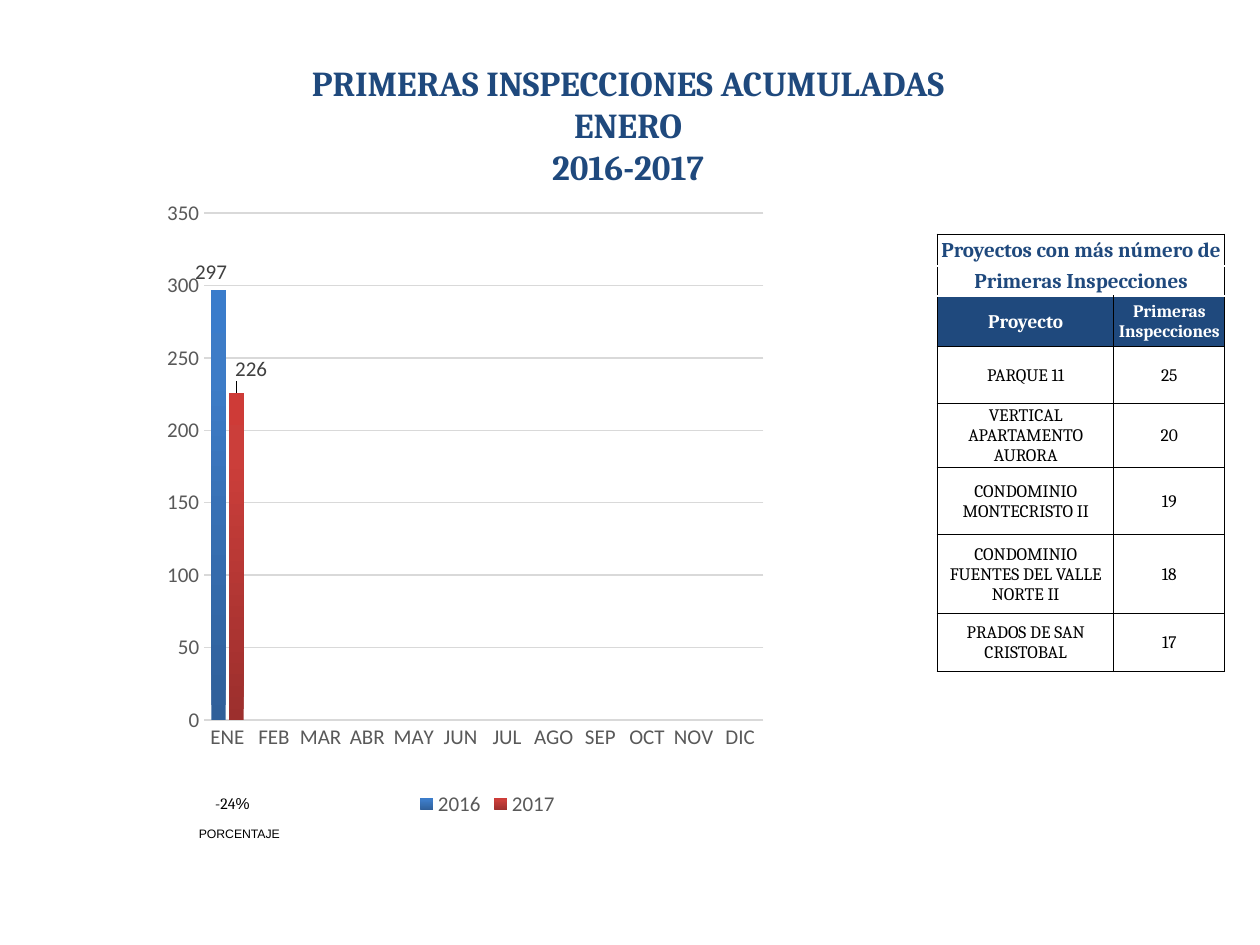
from lxml import etree
from pptx import Presentation
from pptx.chart.data import CategoryChartData
from pptx.dml.color import RGBColor
from pptx.enum.chart import XL_CHART_TYPE, XL_LABEL_POSITION, XL_LEGEND_POSITION, XL_TICK_MARK
from pptx.enum.text import MSO_ANCHOR, MSO_AUTO_SIZE, PP_ALIGN
from pptx.oxml import parse_xml
from pptx.oxml.ns import nsdecls, qn
from pptx.util import Inches, Pt

CENTER, LEFT = PP_ALIGN.CENTER, PP_ALIGN.LEFT
MIDDLE = MSO_ANCHOR.MIDDLE
FIT_SHAPE = MSO_AUTO_SIZE.SHAPE_TO_FIT_TEXT
COLUMNS = XL_CHART_TYPE.COLUMN_CLUSTERED
OUTSIDE_END = XL_LABEL_POSITION.OUTSIDE_END
BOTTOM = XL_LEGEND_POSITION.BOTTOM
NO_TICK = XL_TICK_MARK.NONE

WIDTH, HEIGHT = Inches(10), Inches(7.5)
NAVY, BLACK, WHITE = "1F497D", "000000", "FFFFFF"
AXIS_GRAY, GRID_GRAY, LABEL_GRAY = "595959", "D9D9D9", "404040"

MONTHS = ["ENE", "FEB", "MAR", "ABR", "MAY", "JUN", "JUL", "AGO", "SEP", "OCT", "NOV", "DIC"]
YEARS = [
    ("2016", 297, ("2F5F99", "3D7CC7", "3A7CCB"), (-0.01, 0)),
    ("2017", 226, ("9C2F2D", "CB3E3A", "CE3B37"), (0.02, -0.01)),
]
GRADIENT_STOPS = (0, 80, 100)
PLOT_AREA = {"x": 0.12, "y": 0.04, "w": 0.75, "h": 0.8}

HEADINGS = ["Proyectos con más número de", "Primeras Inspecciones"]
PROJECTS = [
    ("PARQUE 11", "25"),
    ("VERTICAL APARTAMENTO AURORA", "20"),
    ("CONDOMINIO MONTECRISTO II", "19"),
    ("CONDOMINIO FUENTES DEL VALLE NORTE II", "18"),
    ("PRADOS DE SAN CRISTOBAL", "17"),
]
COLUMN_SHARES = [14, 8.8]
ROW_SHARES = [3.33, 3.2, 5.33, 6, 6.53, 7.07, 8.4, 6.13]


def color(value):
    return RGBColor.from_string(value)


def across(share):
    return int(WIDTH * share / 100)


def down(share):
    return int(HEIGHT * share / 100)


def place(left, top, width, height):
    return across(left), down(top), across(width), down(height)


def style_font(font, size, shade, name="Calibri", bold=False):
    font.size = Pt(size)
    font.name = name
    font.bold = bold
    font.color.rgb = color(shade)


def add_span(para, text, size, shade, name="Cambria", bold=False):
    span = para.add_run()
    span.text = text
    style_font(span.font, size, shade, name, bold)


def add_text(slide, area, lines, align=LEFT):
    box = slide.shapes.add_textbox(*place(*area))
    frame = box.text_frame
    frame.word_wrap = True
    frame.auto_size = FIT_SHAPE
    for index, spans in enumerate(lines):
        para = frame.paragraphs[0] if index == 0 else frame.add_paragraph()
        para.alignment = align
        for span in spans:
            add_span(para, *span)


def set_borders(cell, widths):
    properties = cell._tc.get_or_add_tcPr()
    for side in "LRTB":
        if side in widths:
            line = etree.SubElement(properties, qn(f"a:ln{side}"), w=str(Pt(widths[side])))
            fill = etree.SubElement(line, qn("a:solidFill"))
            etree.SubElement(fill, qn("a:srgbClr"), val=BLACK)


def fill_cell(cell, text, size, shade, bold, widths, background=None):
    set_borders(cell, widths)
    cell.margin_left = cell.margin_right = cell.margin_top = Inches(0.01)
    cell.margin_bottom = 0
    cell.vertical_anchor = MIDDLE
    if background:
        cell.fill.solid()
        cell.fill.fore_color.rgb = color(background)
    else:
        cell.fill.background()
    para = cell.text_frame.paragraphs[0]
    para.alignment = CENTER
    if text:
        add_span(para, text, size, shade, bold=bold)


def add_project_table(slide, area):
    frame = slide.shapes.add_table(len(ROW_SHARES), len(COLUMN_SHARES), *place(*area))
    table = frame.table
    table.first_row = table.horz_banding = False
    for column, share in zip(table.columns, COLUMN_SHARES):
        column.width = across(share)
    for row, share in zip(table.rows, ROW_SHARES):
        row.height = down(share)
    for row, heading in enumerate(HEADINGS):
        widths = {"L": 1, "R": 1, "T": 1} if row == 0 else {"L": 1, "R": 1}
        table.cell(row, 0).merge(table.cell(row, 1))
        for column, text in enumerate((heading, "")):
            fill_cell(table.cell(row, column), text, 12, NAVY, True, widths)
    sides = [{"L": 1, "R": 0.5}, {"L": 0.5, "R": 1}]
    header_row = len(HEADINGS)
    for column, (text, size) in enumerate([("Proyecto", 11), ("Primeras Inspecciones", 10)]):
        widths = {**sides[column], "B": 0.5}
        fill_cell(table.cell(header_row, column), text, size, WHITE, True, widths, NAVY)
    for row, project in enumerate(PROJECTS, header_row + 1):
        for column, text in enumerate(project):
            widths = {**sides[column], "T": 0.5, "B": 0.5}
            fill_cell(table.cell(row, column), text, 10, BLACK, False, widths)


def manual_layout(values, inner=False):
    target = '<c:layoutTarget val="inner"/>' if inner else ""
    modes = '<c:xMode val="edge"/><c:yMode val="edge"/>' if inner else ""
    numbers = "".join(f'<c:{key} val="{value}"/>' for key, value in values.items())
    return parse_xml(
        f'<c:layout {nsdecls("c")}><c:manualLayout>{target}{modes}{numbers}</c:manualLayout></c:layout>'
    )


def fill_gradient(series, shades):
    stops = "".join(
        f'<a:gs pos="{stop * 1000}"><a:srgbClr val="{shade}"/></a:gs>'
        for stop, shade in zip(GRADIENT_STOPS, shades)
    )
    gradient = parse_xml(
        f'<a:gradFill {nsdecls("a")} rotWithShape="1"><a:gsLst>{stops}</a:gsLst>'
        '<a:lin ang="16200000" scaled="0"/></a:gradFill>'
    )
    series.format.line.fill.background()
    series._element.spPr.insert(0, gradient)


def label_january(series, offset):
    labels = series.data_labels
    labels.show_value = True
    labels.position = OUTSIDE_END
    style_font(labels.font, 12, LABEL_GRAY)
    label = series.points[0].data_label
    style_font(label.font, 12, LABEL_GRAY)
    label.position = OUTSIDE_END
    element = series._element.find(".//" + qn("c:dLbl"))
    element.insert(1, manual_layout(dict(zip("xy", offset))))


def style_axis(axis):
    axis.major_tick_mark = axis.minor_tick_mark = NO_TICK
    style_font(axis.tick_labels.font, 12, AXIS_GRAY)


def add_year_chart(slide, area):
    data = CategoryChartData()
    data.categories = MONTHS
    for name, january, _, _ in YEARS:
        data.add_series(name, [january] + [None] * (len(MONTHS) - 1))
    chart = slide.shapes.add_chart(COLUMNS, *place(*area), data).chart
    style_font(chart.font, 10, BLACK)
    chart.has_title = False
    chart.has_legend = True
    chart.legend.position = BOTTOM
    chart.legend.include_in_layout = False
    style_font(chart.legend.font, 12, AXIS_GRAY)

    months, values = chart.category_axis, chart.value_axis
    style_axis(months)
    style_axis(values)
    months.format.line.color.rgb = color(GRID_GRAY)
    months.format.line.width = Pt(1)
    values.minimum_scale = 0
    values.format.line.fill.background()
    values.major_gridlines.format.line.color.rgb = color(GRID_GRAY)
    values.major_gridlines.format.line.width = Pt(0.75)

    plot = chart.plots[0]
    plot.vary_by_categories = False
    plot.gap_width, plot.overlap = 100, -24
    for series, (_, _, shades, offset) in zip(plot.series, YEARS):
        fill_gradient(series, shades)
        label_january(series, offset)
    plot_area = chart._chartSpace.chart.plotArea
    for layout in plot_area.findall(qn("c:layout")):
        plot_area.remove(layout)
    plot_area.insert(0, manual_layout(PLOT_AREA, inner=True))


def main():
    deck = Presentation()
    deck.slide_width, deck.slide_height = WIDTH, HEIGHT
    slide = deck.slides.add_slide(deck.slide_layouts[6])
    title = ["PRIMERAS INSPECCIONES ACUMULADAS", "ENERO", "2016-2017"]
    title_lines = [[(line, 20, NAVY, "Cambria", True)] for line in title]
    add_text(slide, (17.8, 5.87, 64.1, 14.8), title_lines, CENTER)
    add_text(slide, (14.8, 86.8, 8.7, 2.93), [[("PORCENTAJE", 7, BLACK, "Arial")]])
    add_text(slide, (16.1, 83.33, 5.9, 3.33), [[("-24", 9, BLACK), ("%", 9, BLACK, "Arial")]])
    add_project_table(slide, (74.4, 24.8, 22.8, 48.4))
    add_year_chart(slide, (9.1, 19.87, 59.2, 67.07))
    deck.save("out.pptx")


if __name__ == "__main__":
    main()
